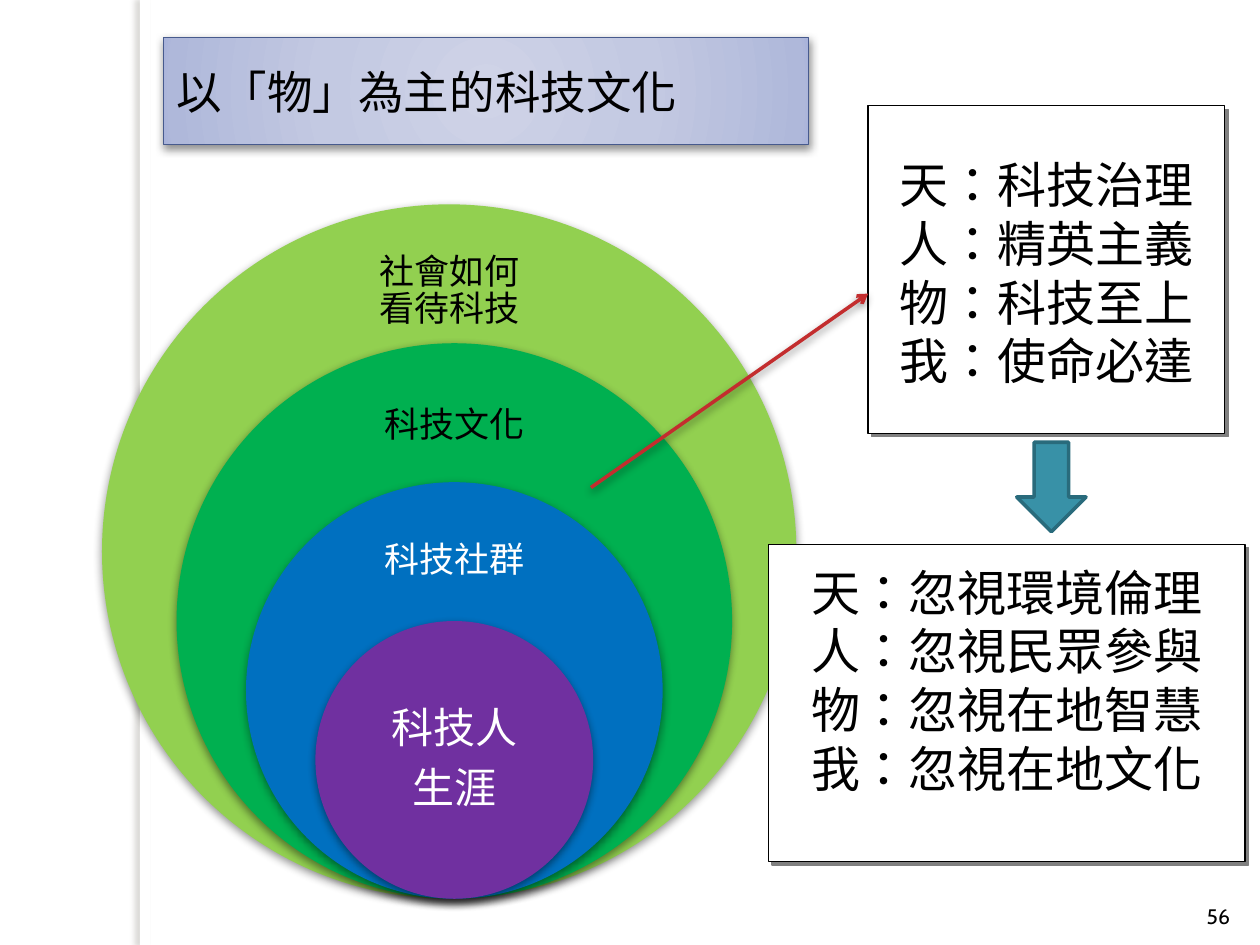
import pptx
import pptx.util
import pptx.oxml
import pptx.oxml.ns
import pptx.dml.color
import pptx.enum.shapes
import pptx.enum.text

Pt = pptx.util.Pt
Color = pptx.dml.color.RGBColor.from_string
Shape = pptx.enum.shapes.MSO_SHAPE
Anchor = pptx.enum.text.MSO_ANCHOR
Align = pptx.enum.text.PP_ALIGN
NS = pptx.oxml.ns.nsdecls("a")

theme = {
    "latin": "Cabin", "asian": "Noto Sans CJK SC",
    "black": "000000", "white": "FFFFFF",
    "title_line": "475A8D", "arrow": "C32D2E",
    "down_fill": "3891A7", "down_line": "296B7C",
    "title_stops": [(0, "CFD3E7"), (50, "C3C9E2"), (97, "AFB8DA"), (100, "A8B2DA")],
    "soft": ("000000", 43, 5, 2, 90),
    "hard": ("808080", 100, 0, 2.8, 45),
    "edge": ("736F63", 25, 3, 3, 180),
    "title": 26, "label": 20, "core": 24, "panel": 28, "number": 12,
}


def style(shape, fill=None, line=None, width=0.75, shadow=None):
    if fill:
        shape.fill.solid()
        shape.fill.fore_color.rgb = Color(fill)
    if line:
        shape.line.color.rgb = Color(line)
        shape.line.width = Pt(width)
    else:
        shape.line.fill.background()
    properties = shape._element.spPr
    effects = pptx.oxml.parse_xml(f"<a:effectLst {NS}/>")
    if shadow:
        color, alpha, blur, distance, angle = shadow
        effects.append(pptx.oxml.parse_xml(
            f'<a:outerShdw {NS} blurRad="{Pt(blur)}" dist="{Pt(distance)}" '
            f'dir="{angle * 60000}" algn="ctr" rotWithShape="0">'
            f'<a:srgbClr val="{color}"><a:alpha val="{alpha * 1000}"/></a:srgbClr></a:outerShdw>'))
    properties.append(effects)


def write(shape, lines, size, color, font, align, anchor, inset=None, spacing=None):
    frame = shape.text_frame
    frame.word_wrap = True
    frame.auto_size = pptx.enum.text.MSO_AUTO_SIZE.NONE
    frame.vertical_anchor = anchor
    if inset is not None:
        frame.margin_left = frame.margin_right = Pt(inset)
        frame.margin_top = frame.margin_bottom = Pt(inset)
    for index, line in enumerate(lines):
        para = frame.add_paragraph() if index else frame.paragraphs[0]
        para.alignment = align
        if spacing:
            para.line_spacing = spacing
            para.space_after = Pt(size * 0.35)
        span = para.add_run()
        span.text = line
        span.font.size = Pt(size)
        span.font.name = font
        span.font.color.rgb = Color(color)
        properties = span._r.get_or_add_rPr()
        properties.set("lang", "zh-TW")
        properties.append(pptx.oxml.parse_xml(f'<a:ea {NS} typeface="{theme["asian"]}"/>'))


deck = pptx.Presentation()
deck.slide_width, deck.slide_height = Pt(720), Pt(540)
page = deck.slides.add_slide(deck.slide_layouts[5])

edge = page.shapes.add_shape(Shape.RECTANGLE, Pt(80), Pt(0), Pt(5.8), Pt(540))
style(edge, theme["white"], shadow=theme["edge"])

rings = [
    (["社會如何看待科技"], "92D050", "black", "label", 256.7, 136.8, 59.8),
    (["科技文化"], "00B050", "black", "label", 259.6, 215.3, 56.9),
    (["科技社群"], "0070C0", "white", "label", 259.6, 293.8, 53.3),
    (["科技人", "生涯"], "7030A0", "white", "core", 259.6, 394.6, 79.2),
]
outer, bottom, label_width = 396.8, 513.6, 112
for index, (lines, fill, color, kind, center, top, height) in enumerate(rings):
    size = outer * (1 - index / 5)
    ring = page.shapes.add_shape(
        Shape.OVAL, Pt(center - size / 2), Pt(bottom - size), Pt(size), Pt(size))
    style(ring, fill, shadow=theme["soft"])
    label = page.shapes.add_textbox(
        Pt(center - label_width / 2), Pt(top), Pt(label_width), Pt(height))
    inset = 13.7 if kind == "core" else 11.5
    write(label, lines, theme[kind], theme[color], theme["latin"],
          Align.CENTER, Anchor.MIDDLE, inset, 0.9)

panels = [
    (["天：科技治理", "人：精英主義", "物：科技至上", "我：使命必達"],
     (496.1, 60.5, 203.8, 187.2), Anchor.BOTTOM, 25),
    (["天：忽視環境倫理", "人：忽視民眾參與", "物：忽視在地智慧", "我：忽視在地文化"],
     (439.2, 311, 272.2, 181.4), Anchor.MIDDLE, 30),
]
for lines, place, anchor, margin in panels:
    panel = page.shapes.add_shape(Shape.RECTANGLE, *map(Pt, place))
    style(panel, theme["white"], theme["black"], shadow=theme["hard"])
    write(panel, lines, theme["panel"], theme["black"], theme["asian"], Align.CENTER, anchor)
    panel.text_frame.margin_bottom = Pt(margin)

arrow = page.shapes.add_connector(
    pptx.enum.shapes.MSO_CONNECTOR.STRAIGHT, Pt(337.7), Pt(278.6), Pt(496.1), Pt(167.8))
style(arrow, line=theme["arrow"], width=2, shadow=theme["soft"])
arrow.line._get_or_add_ln().append(pptx.oxml.parse_xml(f'<a:tailEnd {NS} type="arrow"/>'))

down = page.shapes.add_shape(Shape.DOWN_ARROW, Pt(581), Pt(252.7), Pt(39.6), Pt(51.1))
style(down, theme["down_fill"], theme["down_line"], 2)

title = page.shapes.title
title.left, title.top, title.width, title.height = Pt(93.6), Pt(21.6), Pt(368.6), Pt(61.2)
style(title, theme["white"], theme["title_line"], shadow=theme["soft"])
stops = "".join(f'<a:gs pos="{position * 1000}"><a:srgbClr val="{color}"/></a:gs>'
                for position, color in theme["title_stops"])
gradient = pptx.oxml.parse_xml(
    f'<a:gradFill {NS} rotWithShape="1"><a:gsLst>{stops}</a:gsLst><a:path path="circle">'
    '<a:fillToRect l="50000" t="50000" r="50000" b="50000"/></a:path></a:gradFill>')
solid = title._element.spPr.find(pptx.oxml.ns.qn("a:solidFill"))
solid.getparent().replace(solid, gradient)
write(title, ["以「物」為主的科技文化"], theme["title"], theme["black"], theme["latin"],
      Align.LEFT, Anchor.MIDDLE)

number = page.shapes.add_textbox(Pt(678.2), Pt(496.8), Pt(36), Pt(37.4))
write(number, ["56"], theme["number"], theme["black"], theme["latin"],
      Align.CENTER, Anchor.BOTTOM)

deck.save("out.pptx")
